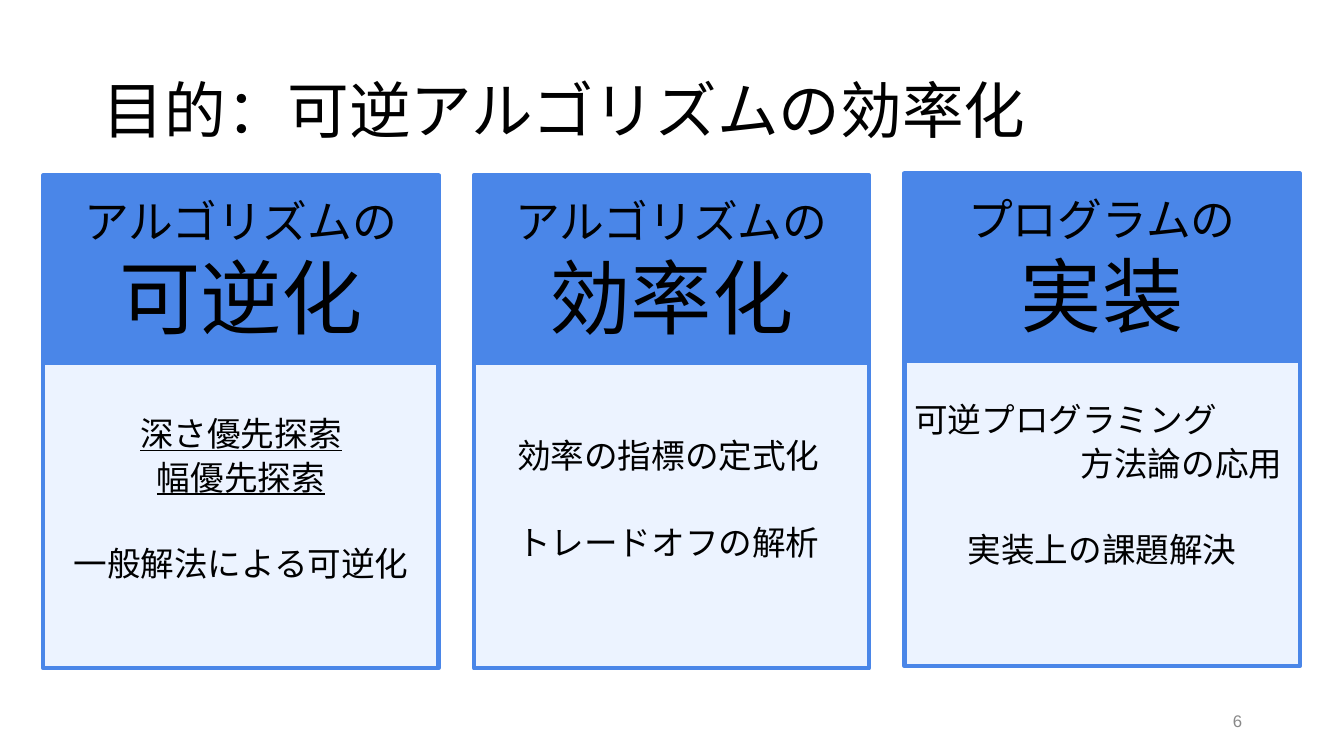
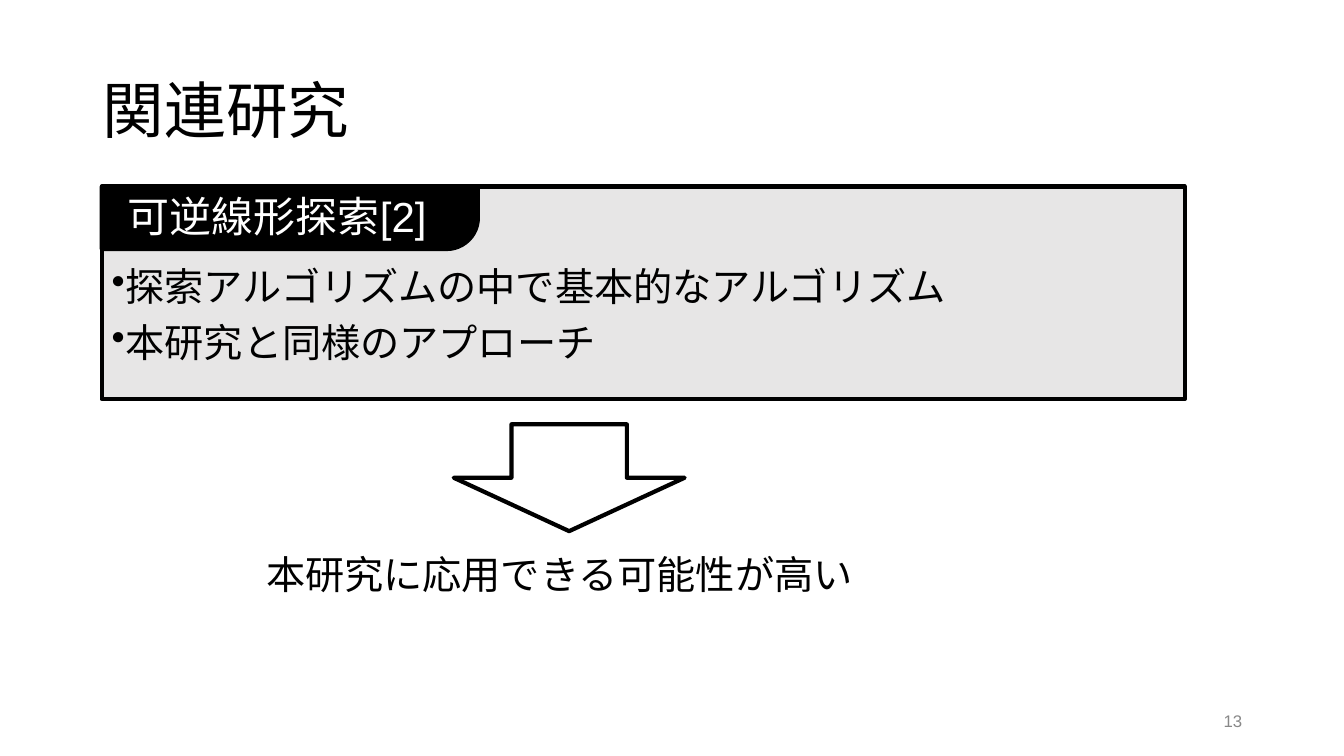
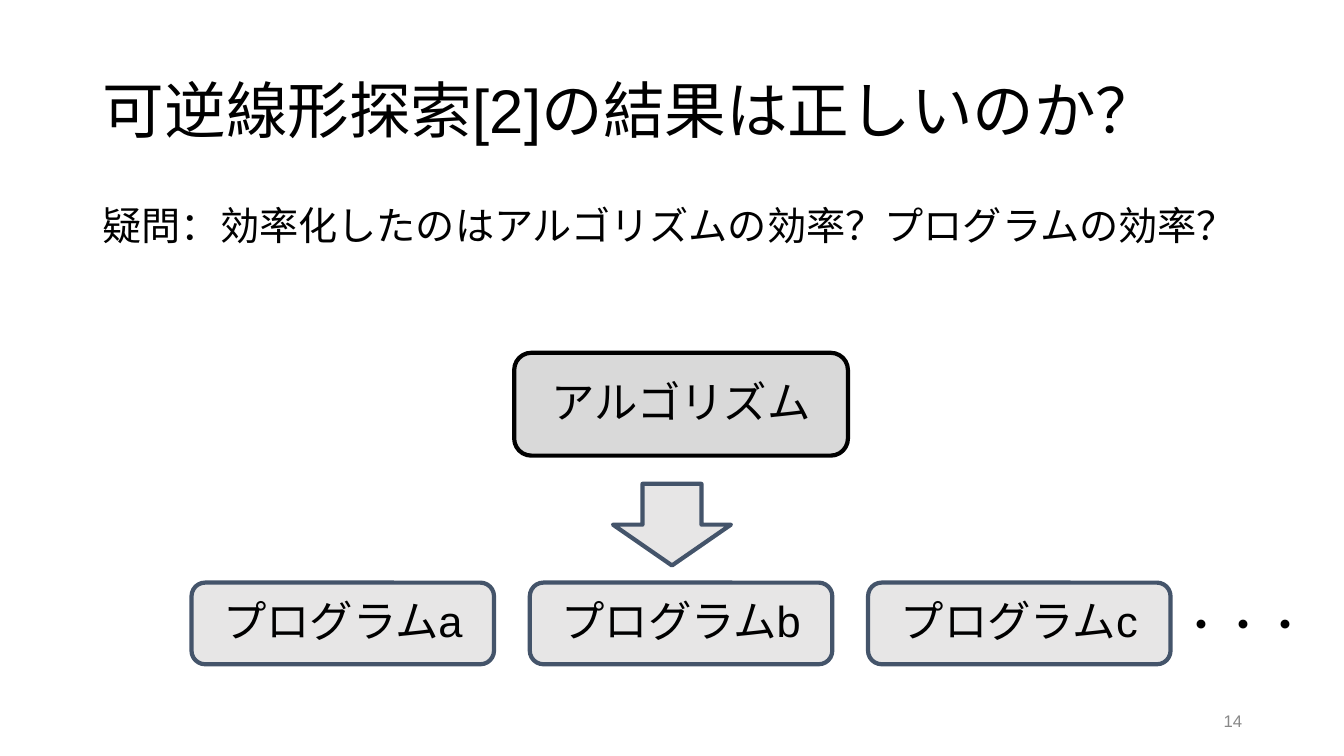
from lxml import etree
from pptx import Presentation
from pptx import util as u
from pptx.dml.color import RGBColor
from pptx.enum import shapes, text
from pptx.oxml import ns

Inches, Pt = u.Inches, u.Pt
KIND = shapes.MSO_SHAPE
ALIGN, ANCHOR = text.PP_ALIGN, text.MSO_ANCHOR

FONT = "Arial"
BLACK = RGBColor(0, 0, 0)
WHITE = RGBColor(255, 255, 255)
NUMBER_GRAY = RGBColor(0x88, 0x88, 0x88)
BLUE = RGBColor(0x4A, 0x86, 0xE8)
PALE_BLUE = RGBColor(0xEC, 0xF3, 0xFF)
LIGHT_GRAY = RGBColor(0xE7, 0xE6, 0xE6)
MID_GRAY = RGBColor(0xD9, 0xD9, 0xD9)
SLATE = RGBColor(0x44, 0x54, 0x6A)


def setup_frame(shape, anchor=ANCHOR.TOP, insets=(0.1, 0.1, 0.1, 0.1)):
    tf = shape.text_frame
    tf.word_wrap = True
    tf.auto_size = text.MSO_AUTO_SIZE.NONE
    tf.vertical_anchor = anchor
    tf.margin_left, tf.margin_top, tf.margin_right, tf.margin_bottom = map(Inches, insets)
    return tf


def add_line(tf, words, size, color=BLACK, align=ALIGN.LEFT, spacing=0.9,
             before=0, indent=0, underline=False, bullet=False):
    p = tf.paragraphs[0]
    if p.runs:
        p = tf.add_paragraph()
    p.alignment = align
    p.line_spacing = spacing
    p.space_before = Pt(before)
    if indent:
        p_pr = p._p.get_or_add_pPr()
        p_pr.set("marL", str(Inches(indent)))
        p_pr.set("indent", str(-Inches(indent) if bullet else 0))
        if bullet:
            etree.SubElement(p_pr, ns.qn("a:buChar"), char="•")
    r = p.add_run()
    r.text = words
    r.font.size = Pt(size)
    r.font.name = FONT
    r.font.color.rgb = color
    if underline:
        r.font.underline = True
    etree.SubElement(r._r.get_or_add_rPr(), ns.qn("a:ea"), typeface=FONT)


def add_box(s, kind, box, fill, line, adjust=None):
    sp = s.shapes.add_shape(kind, *map(Inches, box))
    sp.shadow.inherit = False
    if fill is None:
        sp.fill.background()
    else:
        sp.fill.solid()
        sp.fill.fore_color.rgb = fill
    sp.line.color.rgb = line
    sp.line.width = Pt(3)
    if adjust is not None:
        sp.adjustments[0] = adjust
    return sp


def add_text(s, box, words, size, anchor=ANCHOR.TOP, inset=0.05, **style):
    sp = s.shapes.add_textbox(*map(Inches, box))
    tf = setup_frame(sp, anchor, (0.1, inset, 0.1, inset))
    add_line(tf, words, size, **style)


def new_slide(prs, title, number):
    s = prs.slides.add_slide(prs.slide_layouts[5])
    sp = s.shapes.title
    sp.left, sp.top, sp.width, sp.height = map(Inches, (0.92, 0.4, 11.5, 1.45))
    add_line(setup_frame(sp, ANCHOR.MIDDLE, (0.1, 0.05, 0.1, 0.05)), title, 44)
    add_text(s, (9.42, 6.95, 3, 0.4), str(number), 12, ANCHOR.MIDDLE,
             color=NUMBER_GRAY, align=ALIGN.RIGHT, spacing=1)
    return s


def goal_card(s, left, top, lead, keyword, lines, bottom_inset=0.1):
    width = 3.92
    body = add_box(s, KIND.RECTANGLE, (left, top + 1.57, width, 3.32), PALE_BLUE, BLUE)
    tf = setup_frame(body, ANCHOR.MIDDLE, (0.1, 0.1, 0.1, bottom_inset))
    for words, style in lines:
        add_line(tf, words, 24, **{"before": 5, **style})
    head = add_box(s, KIND.RECTANGLE, (left, top, width, 1.86), BLUE, BLUE)
    tf = setup_frame(head, ANCHOR.MIDDLE)
    for words, size in ((lead, 32), (keyword, 58)):
        add_line(tf, words, size, align=ALIGN.CENTER, spacing=1)


def purpose_slide(prs):
    s = new_slide(prs, "目的：可逆アルゴリズムの効率化", 6)
    center = {"align": ALIGN.CENTER}
    gap = {"before": 36}
    em = 0.33
    cards = [
        (1.74, "アルゴリズムの", "可逆化", [
            ("深さ優先探索", {**center, "underline": True}),
            ("幅優先探索", {**center, "underline": True}),
            ("一般解法による可逆化", {**center, **gap})], 0.1),
        (1.74, "アルゴリズムの", "効率化", [
            ("効率の指標の定式化", {"indent": em}),
            ("トレードオフの解析", {"indent": em, **gap})], 0.1),
        (1.72, "プログラムの", "実装", [
            ("可逆プログラミング", {}),
            ("方法論の応用", {"indent": 5 * em}),
            ("実装上の課題解決", {**center, **gap})], 0.34),
    ]
    for i, (top, lead, keyword, lines, bottom_inset) in enumerate(cards):
        goal_card(s, 0.43 + 4.27 * i, top, lead, keyword, lines, bottom_inset)


def topic_panel(s, left, top, heading, points):
    panel = add_box(s, KIND.RECTANGLE, (left, top, 10.74, 2.11), LIGHT_GRAY, BLACK)
    tf = setup_frame(panel, insets=(0.1, 0.8, 0.1, 0.1))
    for words in points:
        add_line(tf, words, 28, before=10, indent=0.13, bullet=True)
    tab = add_box(s, KIND.ROUND_1_RECTANGLE, (left, top, 3.73, 0.62), BLACK, BLACK, 0.5)
    tab.rotation = 180
    tab._element.spPr.xfrm.set("flipH", "1")
    add_text(s, (left + 0.16, top, 3.33, 0.62), heading, 30, inset=0.1, color=WHITE)


def related_slide(prs):
    s = new_slide(prs, "関連研究", 13)
    add_text(s, (2.54, 5.46, 6.98, 1.31), "本研究に応用できる可能性が高い", 28, before=10)
    add_box(s, KIND.DOWN_ARROW, (4.5, 4.21, 2.29, 1.06), None, BLACK)
    topic_panel(s, 1.01, 1.85, "可逆線形探索[2]",
                ["探索アルゴリズムの中で基本的なアルゴリズム", "本研究と同様のアプローチ"])


def node(s, box, words, fill, line):
    sp = add_box(s, KIND.ROUNDED_RECTANGLE, box, fill, line)
    add_line(setup_frame(sp, ANCHOR.MIDDLE), words, 31, align=ALIGN.CENTER, before=10)


def program_row(s, left, top, names):
    width, height, pitch = 3, 0.81, 3.355
    for i, name in enumerate(names):
        node(s, (left + pitch * i, top, width, height), "プログラム" + name, LIGHT_GRAY, SLATE)
    end = left + pitch * (len(names) - 1) + width
    add_text(s, (end, top, 1.56, height), "・・・", 30, ANCHOR.MIDDLE, inset=0.1, spacing=1)


def question_slide(prs):
    s = new_slide(prs, "可逆線形探索[2]の結果は正しいのか？", 14)
    add_text(s, (0.92, 2, 11.5, 4.76),
             "疑問：効率化したのはアルゴリズムの効率？プログラムの効率？", 28, before=10)
    node(s, (5.1, 3.5, 3.31, 1.02), "アルゴリズム", MID_GRAY, BLACK)
    add_box(s, KIND.DOWN_ARROW, (6.08, 4.8, 1.17, 0.81), LIGHT_GRAY, SLATE)
    program_row(s, 1.9, 5.78, "abc")


def main():
    prs = Presentation()
    prs.slide_width, prs.slide_height = Inches(13.33), Inches(7.5)
    purpose_slide(prs)
    related_slide(prs)
    question_slide(prs)
    prs.save("out.pptx")


if __name__ == "__main__":
    main()
